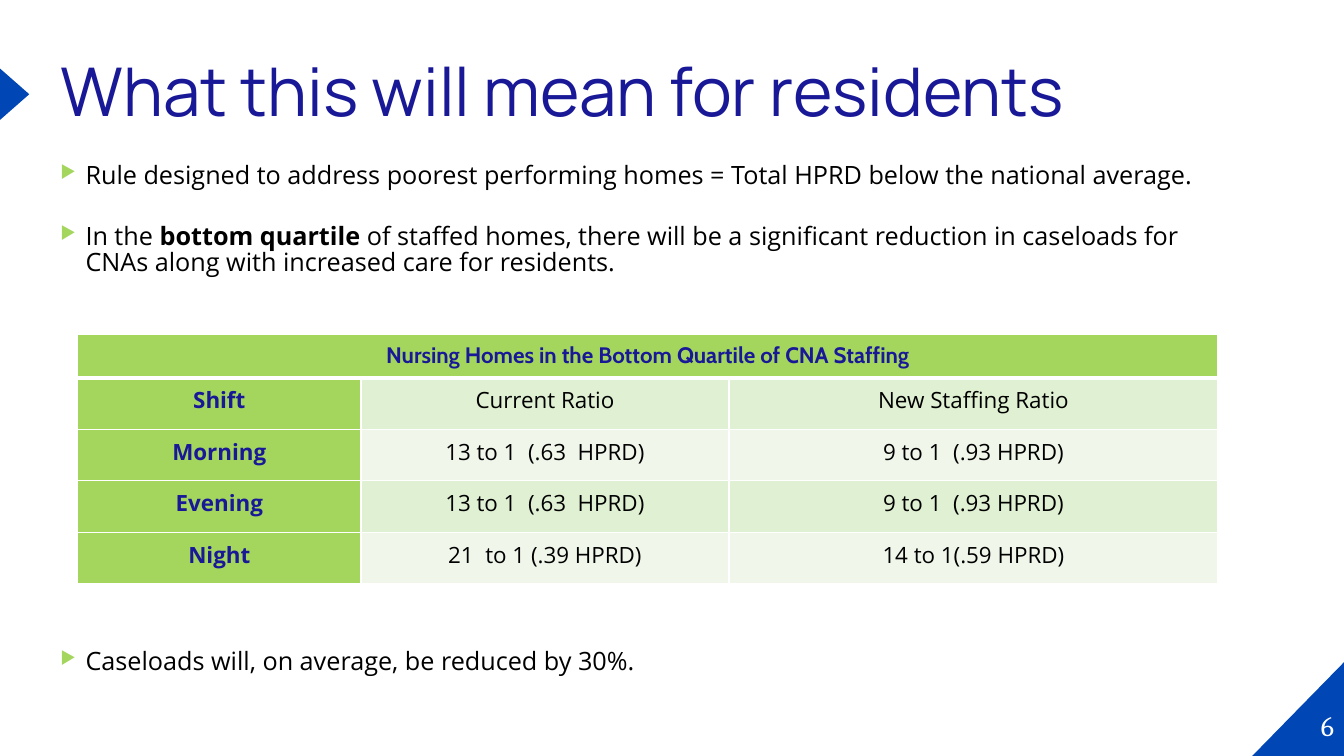
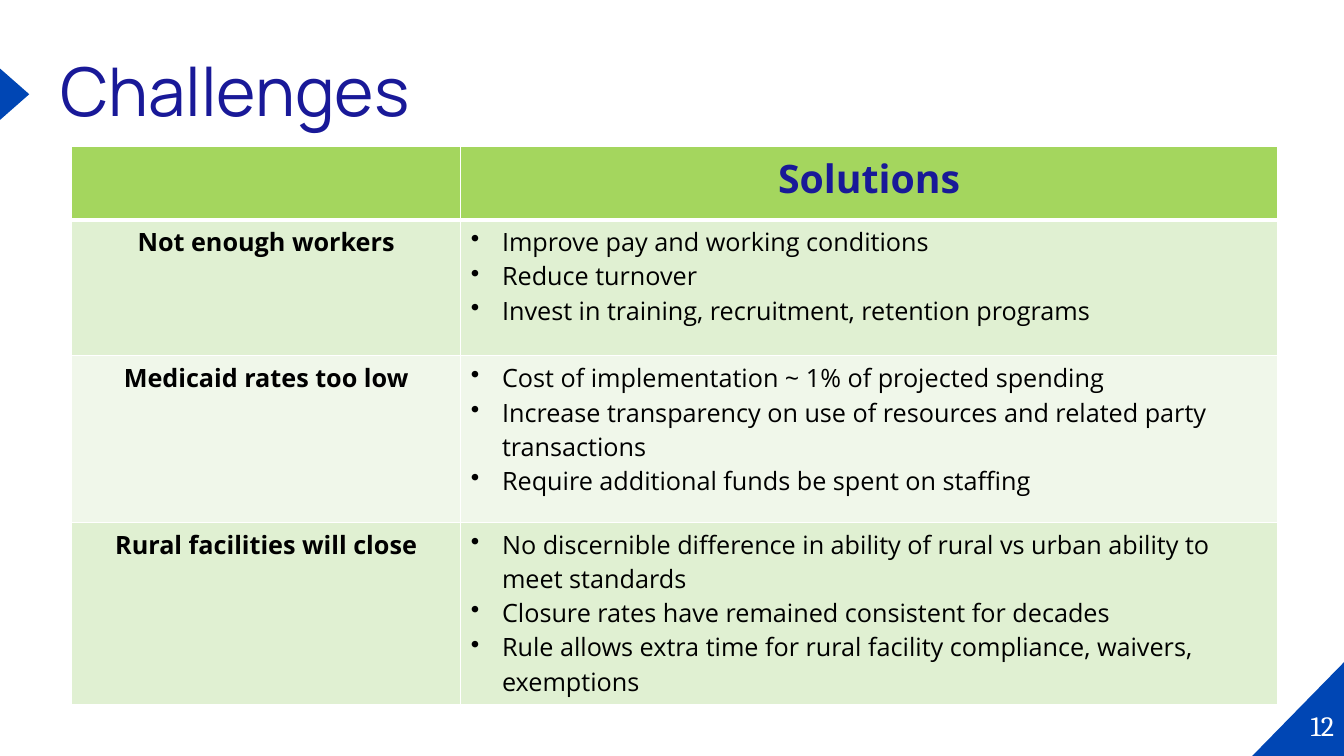
from dataclasses import dataclass

from lxml import etree
from pptx import Presentation
from pptx.dml.color import RGBColor
from pptx.enum.shapes import MSO_SHAPE
from pptx.enum.text import MSO_ANCHOR, PP_ALIGN
from pptx.oxml.ns import qn
from pptx.util import Emu, Pt

PX = 9144  # EMU per px, 100 px to the inch
LEFT, CENTER, RIGHT = PP_ALIGN.LEFT, PP_ALIGN.CENTER, PP_ALIGN.RIGHT
TOP, MIDDLE = MSO_ANCHOR.TOP, MSO_ANCHOR.MIDDLE
TRIANGLE, CORNER = MSO_SHAPE.ISOSCELES_TRIANGLE, MSO_SHAPE.RIGHT_TRIANGLE


@dataclass(frozen=True)
class Style:
    size: int
    font: str
    color: str
    bold: bool = False


@dataclass(frozen=True)
class Bullet:
    char: str
    indent: int
    color: str = ""
    percent: int = 100


class Theme:
    blue, navy, white, black = "0046B4", "191998", "FFFFFF", "000000"
    green = "A4D65E"
    bands = ("E0F0D2", "F0F7EA")
    title = Style(48, "Manrope", navy)
    number = Style(20, "Cambria", white)
    body = Style(18, "Open Sans", black)
    challenge = Style(18, "Open Sans", black, True)
    solutions = Style(28, "Open Sans", navy, True)
    caption = Style(16, "Cabin", navy, True)
    shift = Style(16, "Open Sans", navy, True)
    ratio = Style(16, "Open Sans", black)
    arrow = Bullet("▶", 25, green, 70)
    dot = Bullet("•", 31)


RESIDENT_POINTS = [
    "Rule designed to address poorest performing homes = Total HPRD below the national average.",
    "In the **bottom quartile **of staffed homes, there will be a significant reduction "
    "in caseloads for CNAs along with increased care for residents.",
]
CASELOAD_POINT = "Caseloads will, on average, be reduced by 30%."
STAFFING_CAPTION = "Nursing Homes in the Bottom Quartile of CNA Staffing"
STAFFING = [
    ("Shift", "Current Ratio", "New Staffing Ratio"),
    ("Morning", "13 to 1  (.63  HPRD)", "9 to 1  (.93 HPRD)"),
    ("Evening", "13 to 1  (.63  HPRD)", "9 to 1  (.93 HPRD)"),
    ("Night", "21  to 1 (.39 HPRD)", "14 to 1(.59 HPRD)"),
]
CHALLENGES = [
    ("Not enough workers", [
        "Improve pay and working conditions",
        "Reduce turnover",
        "Invest in training, recruitment, retention programs",
    ]),
    ("Medicaid rates too low", [
        "Cost of implementation ~ 1% of projected spending",
        "Increase transparency on use of resources and related party transactions",
        "Require additional funds be spent on staffing",
    ]),
    ("Rural facilities will close", [
        "No discernible difference in ability of rural vs urban ability to meet standards",
        "Closure rates have remained consistent for decades",
        "Rule allows extra time for rural facility compliance, waivers, exemptions",
    ]),
]


def px(*lengths):
    return [Emu(length * PX) for length in lengths]


def rgb(color):
    return RGBColor.from_string(color)


# Text
def add_bullet(paragraph, bullet):
    props = paragraph._p.get_or_add_pPr()
    props.set("marL", str(bullet.indent * PX))
    props.set("indent", str(-bullet.indent * PX))
    if bullet.color:
        tint = etree.SubElement(props, qn("a:buClr"))
        etree.SubElement(tint, qn("a:srgbClr"), val=bullet.color)
    etree.SubElement(props, qn("a:buSzPct"), val=str(bullet.percent * 1000))
    etree.SubElement(props, qn("a:buChar"), char=bullet.char)


def write(frame, lines, style, align=LEFT, bullet=None, spacing=None, before=0, after=0):
    """Fill a frame with paragraphs; **marks** set a bold phrase."""
    for index, line in enumerate(lines):
        paragraph = frame.add_paragraph() if index else frame.paragraphs[0]
        paragraph.alignment = align
        if bullet:
            add_bullet(paragraph, bullet)
        if spacing:
            paragraph.line_spacing = spacing
        paragraph.space_before = Pt(before if index else 0)
        paragraph.space_after = Pt(after)
        for part, phrase in enumerate(line.split("**")):
            run = paragraph.add_run()
            run.text = phrase
            run.font.size = Pt(style.size)
            run.font.name = style.font
            run.font.bold = style.bold or part % 2 == 1
            run.font.color.rgb = rgb(style.color)


def add_text(slide, at, lines, style, anchor=TOP, **layout):
    frame = slide.shapes.add_textbox(*px(*at)).text_frame
    frame.word_wrap = True
    frame.vertical_anchor = anchor
    write(frame, lines, style, **layout)


# Shared slide frame
def add_mark(slide, preset, at):
    mark = slide.shapes.add_shape(preset, *px(*at))
    mark.shadow.inherit = False
    mark.fill.solid()
    mark.fill.fore_color.rgb = rgb(Theme.blue)
    mark.line.fill.background()
    return mark


def add_slide(deck, title, number):
    slide = deck.slides.add_slide(deck.slide_layouts[6])
    corner = add_mark(slide, CORNER, (1242, 656, 92, 94))
    corner._element.spPr.get_or_add_xfrm().set("flipH", "1")
    add_mark(slide, TRIANGLE, (-11, 79, 51, 29)).rotation = 90
    add_text(slide, (50, 43, 1150, 102), [title], Theme.title, MIDDLE, spacing=0.9)
    add_text(slide, (1278, 692, 55, 55), [str(number)], Theme.number, MIDDLE, align=RIGHT)
    return slide


# Tables
def add_grid(slide, left, top, widths, heights):
    """Add a table with white rules, a green header row and banded rows."""
    at = px(left, top, sum(widths), sum(heights))
    table = slide.shapes.add_table(len(heights), len(widths), *at).table
    table.first_row = table.horz_banding = False
    for column, width in zip(table.columns, px(*widths)):
        column.width = width
    for index, (row, height) in enumerate(zip(table.rows, px(*heights))):
        row.height = height
        fill = Theme.bands[(index - 1) % 2] if index else Theme.green
        weights = {"lnL": 1, "lnR": 1, "lnT": 3 if index == 1 else 1, "lnB": 1 if index else 3}
        for cell in row.cells:
            add_rules(cell, weights)
            paint(cell, fill)
    return table


def add_rules(cell, weights):
    props = cell._tc.get_or_add_tcPr()
    for side, weight in weights.items():
        rule = etree.SubElement(props, qn(f"a:{side}"), w=str(Pt(weight)))
        fill = etree.SubElement(rule, qn("a:solidFill"))
        etree.SubElement(fill, qn("a:srgbClr"), val=Theme.white)


def paint(cell, color):
    cell.fill.solid()
    cell.fill.fore_color.rgb = rgb(color)


def set_margins(table, margin):
    for cell in table.iter_cells():
        cell.margin_left, cell.margin_right, cell.margin_top, cell.margin_bottom = px(*[margin] * 4)


# Slides
def build_residents(deck):
    slide = add_slide(deck, "What this will mean for residents", 6)
    points = dict(bullet=Theme.arrow, spacing=0.87, before=10, after=15)
    add_text(slide, (50, 157, 1184, 150), RESIDENT_POINTS, Theme.body, **points)
    add_text(slide, (50, 639, 1184, 60), [CASELOAD_POINT], Theme.body, **points)

    staffing = add_grid(slide, 77, 332, (281, 365, 485), [43] + [51] * len(STAFFING))
    set_margins(staffing, 7)
    caption = staffing.cell(0, 0)
    caption.merge(staffing.cell(0, 2))
    write(caption.text_frame, [STAFFING_CAPTION], Theme.caption, CENTER)
    for row, entries in enumerate(STAFFING, start=1):
        paint(staffing.cell(row, 0), Theme.green)
        for column, entry in enumerate(entries):
            style = Theme.ratio if column else Theme.shift
            write(staffing.cell(row, column).text_frame, [entry], style, CENTER)


def build_challenges(deck):
    slide = add_slide(deck, "Challenges", 12)
    grid = add_grid(slide, 71, 145, (386, 810), (73, 135, 165, 181))
    write(grid.cell(0, 1).text_frame, ["Solutions"], Theme.solutions, CENTER)
    for row, (challenge, solutions) in enumerate(CHALLENGES, start=1):
        write(grid.cell(row, 0).text_frame, [challenge], Theme.challenge, CENTER)
        write(grid.cell(row, 1).text_frame, solutions, Theme.body, bullet=Theme.dot)


def main():
    deck = Presentation()
    deck.slide_width, deck.slide_height = px(1333, 750)
    build_residents(deck)
    build_challenges(deck)
    deck.save("out.pptx")


if __name__ == "__main__":
    main()
